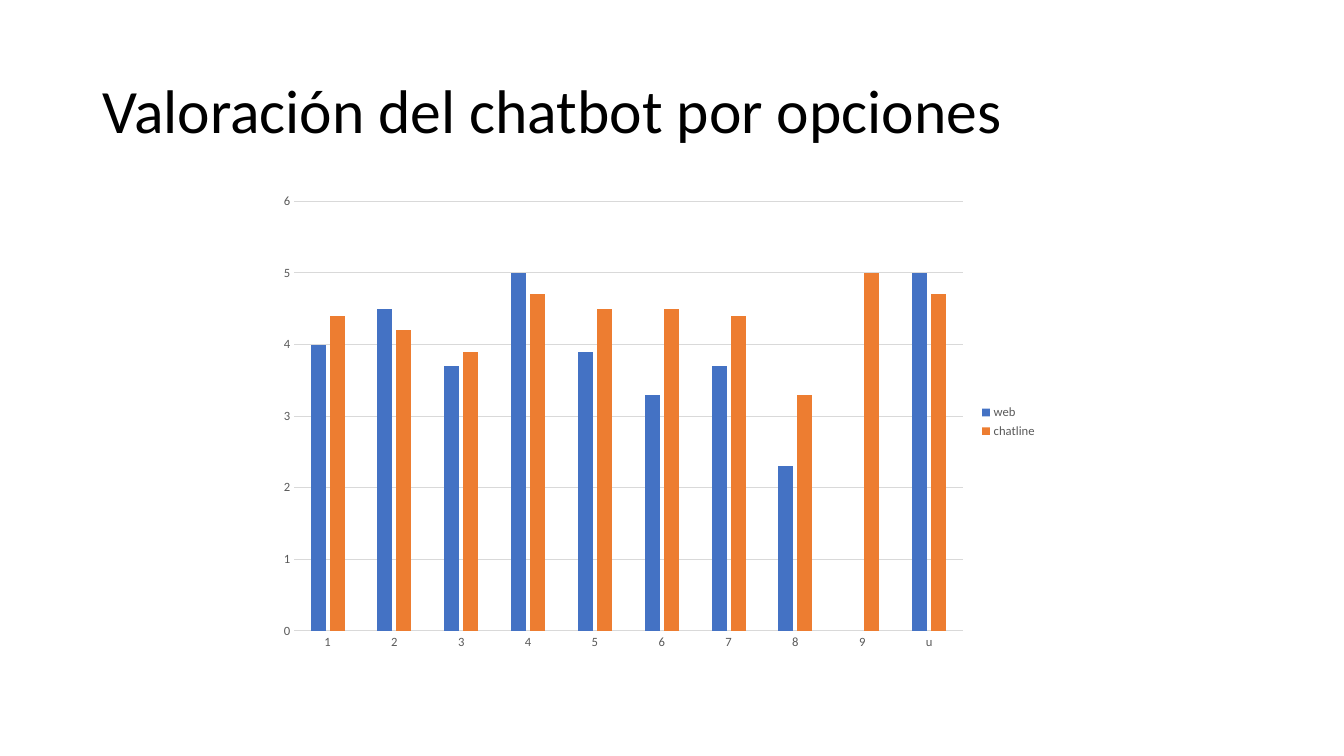
"""Build a slide with a column chart of chatbot ratings by option."""
from pptx import Presentation
from pptx import util as u
from pptx.chart.data import CategoryChartData
from pptx.dml.color import RGBColor
from pptx.enum import chart as ch, text

BLACK = RGBColor(0x00, 0x00, 0x00)
GREY = RGBColor(0x59, 0x59, 0x59)
LIGHT = RGBColor(0xD9, 0xD9, 0xD9)
BLUE = RGBColor(0x44, 0x72, 0xC4)
ORANGE = RGBColor(0xED, 0x7D, 0x31)
FONT = "Calibri"

OPTIONS = ["1", "2", "3", "4", "5", "6", "7", "8", "9", "u"]
RATINGS = [
    ("web", BLUE, [4, 4.5, 3.7, 5, 3.9, 3.3, 3.7, 2.3, None, 5]),
    ("chatline", ORANGE, [4.4, 4.2, 3.9, 4.7, 4.5, 4.5, 4.4, 3.3, 5, 4.7]),
]


def set_font(font, size, color):
    font.name = FONT
    font.size = u.Pt(size)
    font.color.rgb = color


prs = Presentation()
prs.slide_width, prs.slide_height = u.Cm(33.87), u.Cm(19.05)
s = prs.slides.add_slide(prs.slide_layouts[5])

title = s.shapes.title
title.left, title.top = u.Cm(2.33), u.Cm(1.01)
title.width, title.height = u.Cm(29.21), u.Cm(3.68)
tf = title.text_frame
tf.word_wrap = True
tf.vertical_anchor = text.MSO_ANCHOR.MIDDLE
p = tf.paragraphs[0]
p.alignment = text.PP_ALIGN.LEFT
p.line_spacing = 0.9
r = p.add_run()
r.text = "Valoración del chatbot por opciones"
set_font(r.font, 44, BLACK)

data = CategoryChartData()
data.categories = OPTIONS
for name, color, values in RATINGS:
    data.add_series(name, values)
chart = s.shapes.add_chart(
    ch.XL_CHART_TYPE.COLUMN_CLUSTERED,
    u.Cm(6.76), u.Cm(4.65), u.Cm(19.63), u.Cm(11.96), data).chart
chart.has_title = False
set_font(chart.font, 10, BLACK)

plot = chart.plots[0]
plot.vary_by_categories = False
plot.gap_width = 219
plot.overlap = -27
for series, (name, color, values) in zip(plot.series, RATINGS):
    series.format.fill.solid()
    series.format.fill.fore_color.rgb = color
    series.invert_if_negative = False

cat_axis, val_axis = chart.category_axis, chart.value_axis
for axis in (cat_axis, val_axis):
    axis.major_tick_mark = ch.XL_TICK_MARK.NONE
    axis.minor_tick_mark = ch.XL_TICK_MARK.NONE
    set_font(axis.tick_labels.font, 9, GREY)

val_axis.minimum_scale, val_axis.maximum_scale = 0, 6
val_axis.major_unit = 1
val_axis.has_major_gridlines = True
val_axis.format.line.fill.background()
for line in (cat_axis.format.line, val_axis.major_gridlines.format.line):
    line.color.rgb = LIGHT
    line.width = u.Pt(0.75)

chart.has_legend = True
chart.legend.position = ch.XL_LEGEND_POSITION.RIGHT
chart.legend.include_in_layout = False
set_font(chart.legend.font, 9, GREY)

prs.save("out.pptx")
